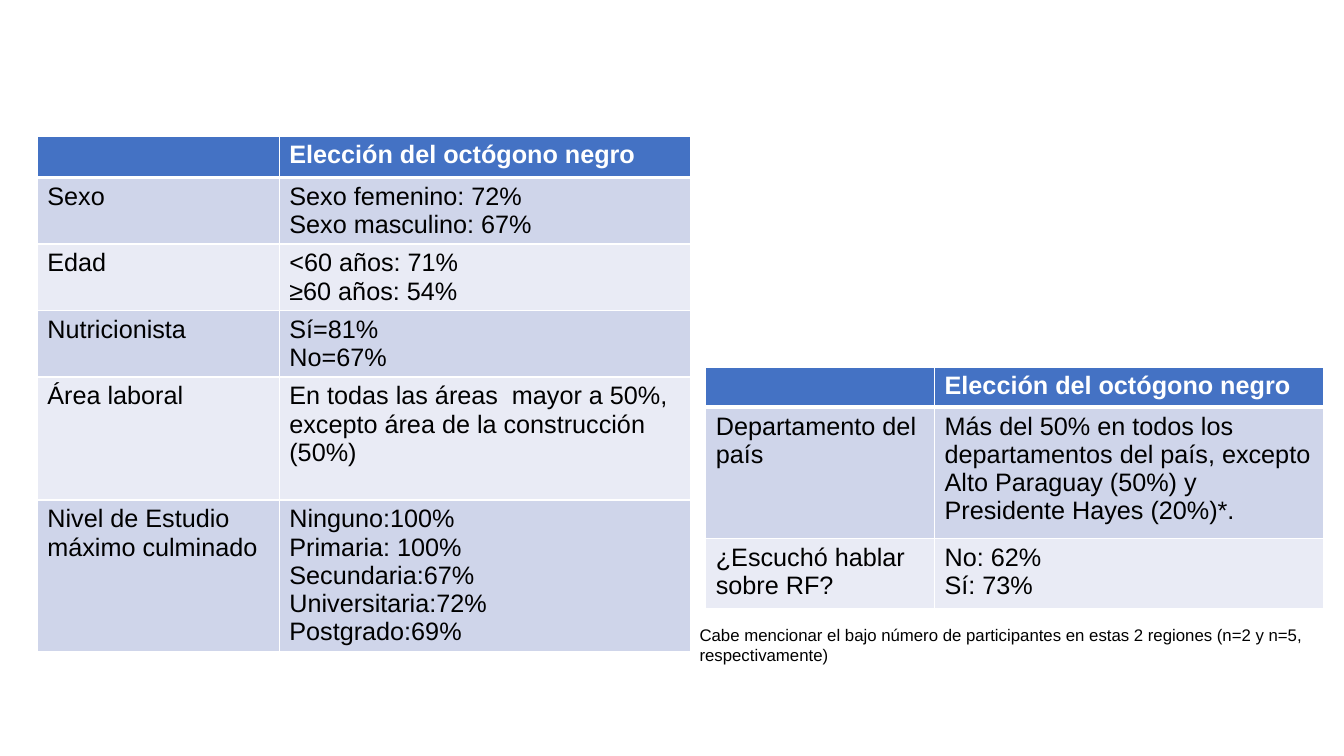
import pptx
import pptx.dml.color
import pptx.oxml
import pptx.oxml.ns
import pptx.util
from pptx.util import Inches

COLORS = {
    "header": "4472C4",
    "band_dark": "CFD5EA",
    "band_light": "E9EBF5",
    "border": "FFFFFF",
    "header_text": "FFFFFF",
    "text": "000000",
}
FONT = "Arial"
HEADER = ("", "Elección del octógono negro")

PROFILE_ROWS = [
    HEADER,
    ("Sexo", "Sexo femenino: 72%\nSexo masculino: 67%"),
    ("Edad", "<60 años: 71%\n≥60 años: 54%"),
    ("Nutricionista", "Sí=81%\nNo=67%"),
    ("Área laboral",
     "En todas las áreas  mayor a 50%, excepto área de la construcción (50%)"),
    ("Nivel de Estudio máximo culminado",
     "Ninguno:100%\nPrimaria: 100%\nSecundaria:67%\nUniversitaria:72%\nPostgrado:69%"),
]
REGION_ROWS = [
    HEADER,
    ("Departamento del país",
     "Más del 50% en todos los departamentos del país, excepto "
     "Alto Paraguay (50%) y Presidente Hayes (20%)*."),
    ("¿Escuchó hablar sobre RF?", "No: 62%\nSí: 73%"),
]
NOTE = ("Cabe mencionar el bajo número de participantes en estas 2 regiones "
        "(n=2 y n=5, respectivamente)")


def rgb(name):
    return pptx.dml.color.RGBColor.from_string(COLORS[name])


def format_text(text_frame, size, color, bold=False):
    for paragraph in text_frame.paragraphs:
        for item in (paragraph, *paragraph.runs):
            item.font.name = FONT
            item.font.size = pptx.util.Pt(size)
            item.font.bold = bold
            item.font.color.rgb = rgb(color)


def set_borders(cell, bottom_width):
    properties = cell._tc.get_or_add_tcPr()
    widths = {"lnL": 1, "lnR": 1, "lnT": 1, "lnB": bottom_width}
    for index, (side, width) in enumerate(widths.items()):
        line = pptx.oxml.parse_xml(
            f'<a:{side} {pptx.oxml.ns.nsdecls("a")} w="{pptx.util.Pt(width)}">'
            f'<a:solidFill><a:srgbClr val="{COLORS["border"]}"/></a:solidFill>'
            f'</a:{side}>')
        properties.insert(index, line)


def add_results_table(slide, left, top, column_widths, row_heights, rows):
    """Two-column table with a blue header and alternating bands."""
    frame = slide.shapes.add_table(
        len(rows), len(column_widths), Inches(left), Inches(top),
        Inches(sum(column_widths)), Inches(sum(row_heights)))
    table = frame.table
    for column, width in zip(table.columns, column_widths):
        column.width = Inches(width)
    for row_index, texts in enumerate(rows):
        table.rows[row_index].height = Inches(row_heights[row_index])
        is_header = row_index == 0
        band = "band_dark" if row_index % 2 else "band_light"
        for column_index, text in enumerate(texts):
            cell = table.cell(row_index, column_index)
            cell.text_frame.text = text
            format_text(cell.text_frame, 18,
                        "header_text" if is_header else "text", is_header)
            cell.fill.solid()
            cell.fill.fore_color.rgb = rgb("header" if is_header else band)
            set_borders(cell, 3 if is_header else 1)


def add_note(slide, left, top, width, height):
    box = slide.shapes.add_textbox(
        Inches(left), Inches(top), Inches(width), Inches(height))
    box.text_frame.word_wrap = True
    box.text_frame.text = NOTE
    format_text(box.text_frame, 12, "text")


def main():
    presentation = pptx.Presentation()
    presentation.slide_width = Inches(13.33)
    presentation.slide_height = Inches(7.5)
    slide = presentation.slides.add_slide(presentation.slide_layouts[6])

    # Results by participant profile
    add_results_table(slide, 0.37, 1.35, (2.4, 4.08),
                      (0.41, 0.66, 0.66, 0.66, 1.22, 1.5), PROFILE_ROWS)
    # Note on the small regional samples
    add_note(slide, 6.84, 6.15, 6.67, 0.5)
    # Results by region and awareness
    add_results_table(slide, 7, 3.64, (2.27, 3.86),
                      (0.4, 1.3, 0.69), REGION_ROWS)

    presentation.save("out.pptx")


if __name__ == "__main__":
    main()
